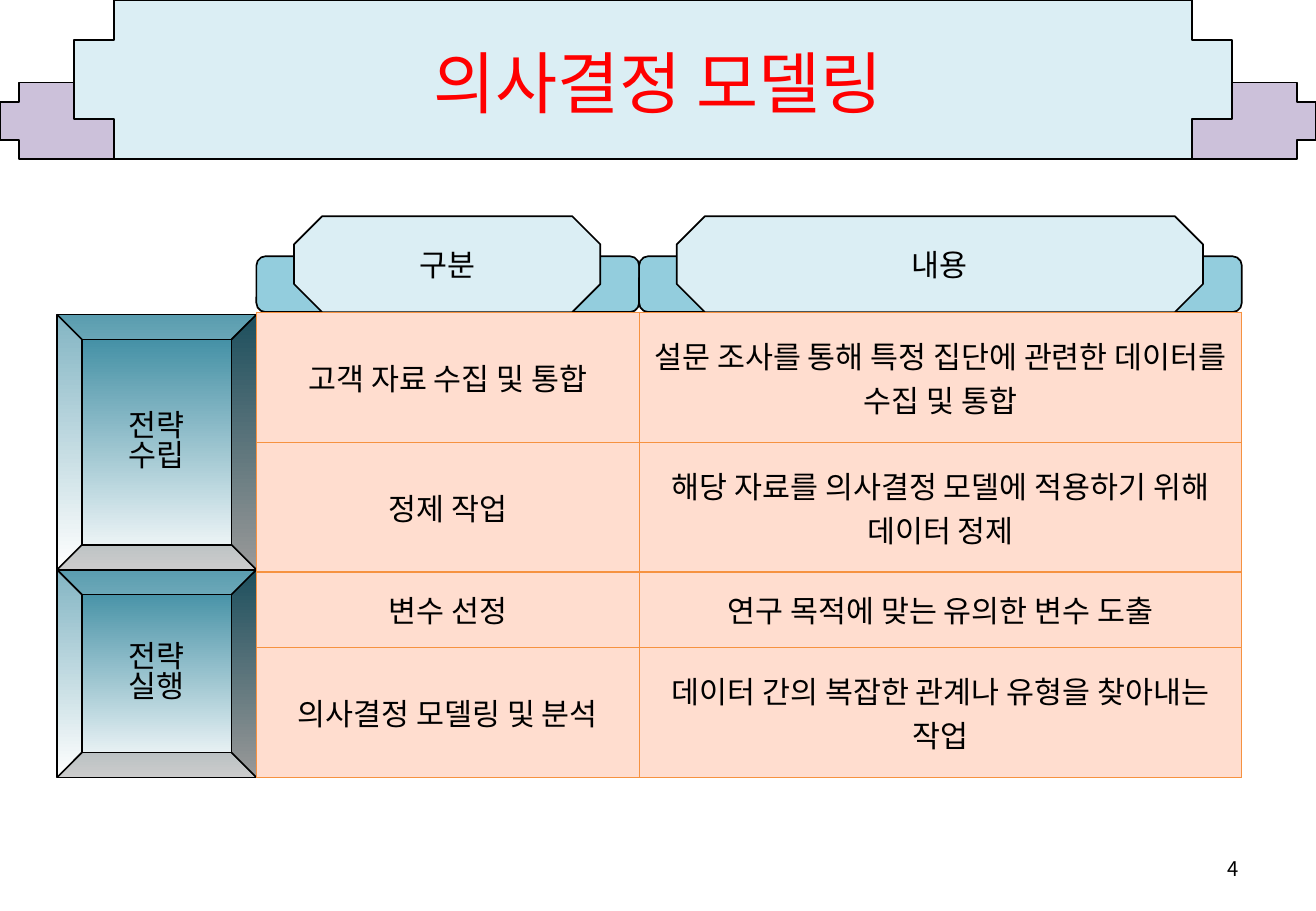
import pptx
import pptx.util
import pptx.oxml
import pptx.oxml.ns
from pptx.dml.color import RGBColor
from pptx.enum.shapes import MSO_SHAPE
from pptx.enum.text import MSO_ANCHOR, MSO_AUTO_SIZE, PP_ALIGN
from pptx.util import Inches, Pt

FONT = "Noto Sans CJK KR"
BLACK = RGBColor(0x00, 0x00, 0x00)
WHITE = RGBColor(0xFF, 0xFF, 0xFF)
RED = RGBColor(0xFF, 0x00, 0x00)
LILAC = RGBColor(0xCC, 0xC1, 0xDA)
PALE_BLUE = RGBColor(0xDB, 0xEE, 0xF4)
SKY = RGBColor(0x93, 0xCD, 0xDD)
TEAL = RGBColor(0x31, 0x85, 0x9C)
PEACH = RGBColor(0xFF, 0xDD, 0xCF)
ORANGE = RGBColor(0xF6, 0x92, 0x40)


def write(tf, text, size=18, color=BLACK, align=PP_ALIGN.CENTER, spacing=None):
    """Fill a text frame, one paragraph per line of text."""
    tf.word_wrap = True
    tf.vertical_anchor = MSO_ANCHOR.MIDDLE
    for i, line in enumerate(text.split("\n")):
        p = tf.paragraphs[0] if i == 0 else tf.add_paragraph()
        p.alignment = align
        p.line_spacing = spacing
        r = p.add_run()
        r.text = line
        r.font.size = Pt(size)
        r.font.name = FONT
        r.font.color.rgb = color
        ea = pptx.oxml.parse_xml(f'<a:ea {pptx.oxml.ns.nsdecls("a")} typeface="{FONT}"/>')
        r.font._element.append(ea)


def add_box(kind, left, top, width, height, fill=None):
    sp = s.shapes.add_shape(kind, Inches(left), Inches(top), Inches(width), Inches(height))
    sp.shadow.inherit = False
    sp.line.color.rgb = BLACK
    sp.line.width = Pt(1)
    if fill is not None:
        sp.fill.solid()
        sp.fill.fore_color.rgb = fill
    return sp


prs = pptx.Presentation()
prs.slide_width = Inches(10.83)
prs.slide_height = Inches(7.5)
s = prs.slides.add_slide(prs.slide_layouts[5])

# Title banner
add_box(MSO_SHAPE.CROSS, 0, 0.68, 10.83, 0.63, LILAC)
add_box(MSO_SHAPE.CROSS, 0.61, 0, 9.53, 1.31, PALE_BLUE)
title = s.shapes.title
title.left, title.top = Inches(0.54), Inches(0.05)
title.width, title.height = Inches(9.75), Inches(1.25)
write(title.text_frame, "의사결정 모델링", size=40, color=RED)
title.text_frame.auto_size = MSO_AUTO_SIZE.NONE
s.shapes.element.append(title.element)  # bring the title in front of the banner

# Slide number field
number = s.shapes.add_textbox(Inches(7.76), Inches(6.95), Inches(2.53), Inches(0.4))
write(number.text_frame, "4", size=12, align=PP_ALIGN.RIGHT)
run = number.text_frame.paragraphs[0].runs[0]._r
field = pptx.oxml.parse_xml(
    f'<a:fld {pptx.oxml.ns.nsdecls("a")} '
    'id="{B6F15528-21DE-4FAA-801E-634DDDAF4B2B}" type="slidenum"/>')
run.addprevious(field)
field.extend(list(run))
run.getparent().remove(run)
prs.element.set("firstSlideNum", "4")

# Column headers
TABLE_LEFT, TABLE_TOP = 2.11, 2.57
COLUMNS = [("구분", 3.15), ("내용", 4.96)]
left = TABLE_LEFT
for text, width in COLUMNS:
    add_box(MSO_SHAPE.ROUNDED_RECTANGLE, left, 2.11, width, 0.46, SKY)
    sp = add_box(MSO_SHAPE.OCTAGON, left + 0.31, 1.78, width - 0.63, 0.79, PALE_BLUE)
    write(sp.text_frame, text)
    left += width

# Strategy phases
for text, top, height in [("전략\n수립", 2.59, 2.1), ("전략\n실행", 4.69, 1.71)]:
    sp = add_box(MSO_SHAPE.BEVEL, 0.47, top, 1.64, height)
    sp.fill.gradient()
    sp.fill.gradient_angle = 270
    for stop, color, position in zip(sp.fill.gradient_stops, (TEAL, WHITE), (0, 1)):
        stop.color.rgb = color
        stop.position = position
    write(sp.text_frame, text, spacing=0.82)

# Modeling steps
ROWS = [
    (1.07, "고객 자료 수집 및 통합", "설문 조사를 통해 특정 집단에 관련한 데이터를 수집 및 통합"),
    (1.07, "정제 작업", "해당 자료를 의사결정 모델에 적용하기 위해 데이터 정제"),
    (0.62, "변수 선정", "연구 목적에 맞는 유의한 변수 도출"),
    (1.07, "의사결정 모델링 및 분석", "데이터 간의 복잡한 관계나 유형을 찾아내는 작업"),
]
table = s.shapes.add_table(
    len(ROWS), len(COLUMNS), Inches(TABLE_LEFT), Inches(TABLE_TOP),
    Inches(sum(width for _, width in COLUMNS)), Inches(sum(row[0] for row in ROWS))).table
table.first_row = False
table.horz_banding = False
for col, (_, width) in zip(table.columns, COLUMNS):
    col.width = Inches(width)
for row, (height, *texts) in zip(table.rows, ROWS):
    row.height = Inches(height)
    for cell, text in zip(row.cells, texts):
        write(cell.text_frame, text)
        cell.vertical_anchor = MSO_ANCHOR.MIDDLE
        cell.margin_left = cell.margin_right = Inches(0.12)
        tc_pr = cell._tc.get_or_add_tcPr()
        for side in ("lnL", "lnR", "lnT", "lnB"):
            tc_pr.append(pptx.oxml.parse_xml(
                f'<a:{side} {pptx.oxml.ns.nsdecls("a")} w="{Pt(0.75)}">'
                f'<a:solidFill><a:srgbClr val="{ORANGE}"/></a:solidFill></a:{side}>'))
        cell.fill.solid()
        cell.fill.fore_color.rgb = PEACH

prs.save("out.pptx")
